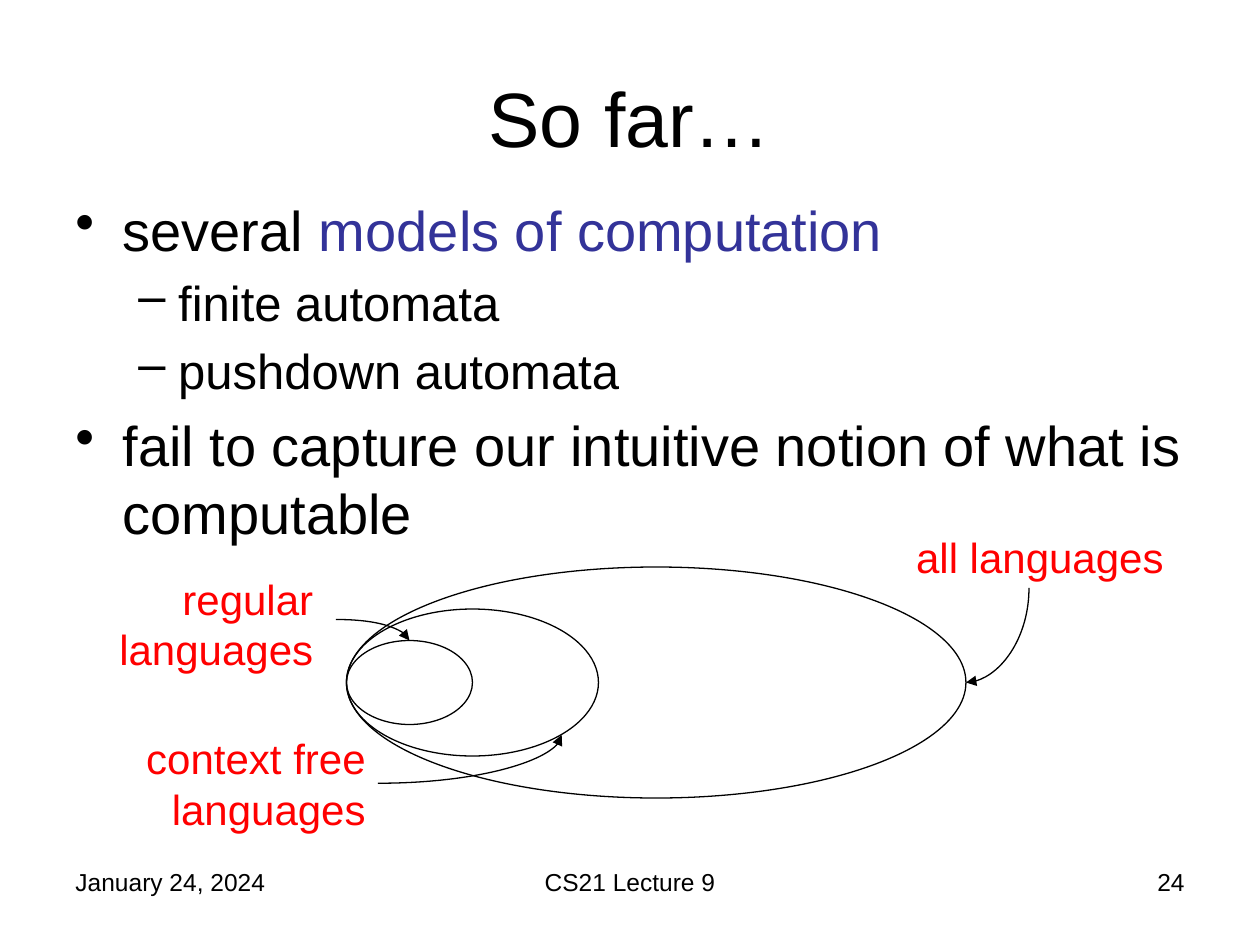
from lxml import etree
from pptx import Presentation
from pptx.dml.color import RGBColor
from pptx.enum.shapes import MSO_CONNECTOR, MSO_SHAPE
from pptx.enum.text import MSO_ANCHOR, MSO_AUTO_SIZE, PP_ALIGN
from pptx.oxml.ns import qn
from pptx.util import Emu, Pt

LEFT, CENTER, RIGHT = PP_ALIGN.LEFT, PP_ALIGN.CENTER, PP_ALIGN.RIGHT
TOP, MIDDLE = MSO_ANCHOR.TOP, MSO_ANCHOR.MIDDLE
GROW, FIXED = MSO_AUTO_SIZE.SHAPE_TO_FIT_TEXT, MSO_AUTO_SIZE.NONE
CURVE, OVAL = MSO_CONNECTOR.CURVE, MSO_SHAPE.OVAL
EMU_PER_PX = 7620
BLACK, BLUE, RED = "000000", "333399", "FF0000"


def px(length):
    return Emu(round(length * EMU_PER_PX))


def color(value):
    return RGBColor.from_string(value)


class SlideBuilder:
    font = "Arial"
    line_width = Pt(0.75)
    bullet_levels = [("•", 32, 45, 45), ("–", 28, 98, 38)]

    def __init__(self, page):
        self.page = page

    def style(self, span, size, ink):
        span.font.name = self.font
        span.font.size = Pt(size)
        span.font.color.rgb = color(ink)

    def frame(self, area, anchor=TOP, fit=FIXED):
        box = self.page.shapes.add_textbox(*map(px, area))
        box.text_frame.word_wrap = True
        box.text_frame.vertical_anchor = anchor
        box.text_frame.auto_size = fit
        return box.text_frame

    def text(self, words, area, size, align=LEFT, ink=BLACK, anchor=TOP):
        frame = self.frame(area, anchor)
        frame.text = words
        para = frame.paragraphs[0]
        para.alignment = align
        self.style(para.runs[0], size, ink)
        return frame

    def label(self, words, area):
        frame = self.text(words, area, 24, RIGHT, RED)
        frame.auto_size = GROW
        frame.paragraphs[0].space_before = Pt(12)

    def bullets(self, items, area):
        frame = self.frame(area)
        for index, (level, spans) in enumerate(items):
            para = frame.add_paragraph() if index else frame.paragraphs[0]
            mark, size, margin, hang = self.bullet_levels[level]
            para.level = level
            para.space_before = Pt(size * 0.2)
            props = para._p.get_or_add_pPr()
            props.set("marL", str(px(margin)))
            props.set("indent", str(px(-hang)))
            etree.SubElement(props, qn("a:buChar"), char=mark)
            for words, ink in spans:
                span = para.add_run()
                span.text = words
                self.style(span, size, ink)

    def ellipse(self, area):
        shape = self.page.shapes.add_shape(OVAL, *map(px, area))
        shape.shadow.inherit = False
        shape.fill.background()
        shape.line.color.rgb = color(BLACK)
        shape.line.width = self.line_width

    def curved_arrow(self, start, end, vertical_first=False):
        (x1, y1), (x2, y2) = start, end
        mid_x, mid_y = (x1 + x2) / 2, (y1 + y2) / 2
        half_x, half_y = (x2 - x1) / 2, (y2 - y1) / 2
        if vertical_first:
            half_x, half_y = half_y, -half_x
        corners = (mid_x - half_x, mid_y - half_y, mid_x + half_x, mid_y + half_y)
        arrow = self.page.shapes.add_connector(CURVE, *map(px, corners))
        arrow.line.color.rgb = color(BLACK)
        arrow.line.width = self.line_width
        props = arrow._element.spPr
        props.find(qn("a:prstGeom")).set("prst", "curvedConnector2")
        if vertical_first:
            props.find(qn("a:xfrm")).set("rot", str(90 * 60000))
        etree.SubElement(props.find(qn("a:ln")), qn("a:tailEnd"), type="triangle")
        etree.SubElement(props, qn("a:effectLst"))


def main():
    deck = Presentation()
    deck.slide_width, deck.slide_height = px(1200), px(900)
    builder = SlideBuilder(deck.slides.add_slide(deck.slide_layouts[6]))

    builder.text("January 24, 2024", (60, 820, 280, 62), 14)
    builder.text("CS21 Lecture 9", (410, 820, 380, 62), 14, CENTER)
    builder.text("24", (860, 820, 280, 62), 14, RIGHT)
    builder.text("So far…", (60, 36, 1080, 150), 44, CENTER, anchor=MIDDLE)
    builder.bullets([
        (0, [("several ", BLACK), ("models of computation", BLUE)]),
        (1, [("finite automata", BLACK)]),
        (1, [("pushdown automata", BLACK)]),
        (0, [("fail to capture our intuitive notion of what is computable", BLACK)]),
    ], (60, 180, 1080, 370))

    sets_left, sets_middle = 330, 650
    for width, height in [(590, 220), (240, 140), (120, 80)]:
        builder.ellipse((sets_left, sets_middle - height / 2, width, height))

    builder.label("regular languages", (90, 540, 220, 108))
    builder.curved_arrow((320, 590), (390, 610))
    builder.label("context free languages", (80, 692, 280, 108))
    builder.curved_arrow((360, 746), (535, 700))
    builder.label("all languages", (840, 500, 280, 60))
    builder.curved_arrow((980, 560), (920, 650), vertical_first=True)

    deck.save("out.pptx")


if __name__ == "__main__":
    main()
